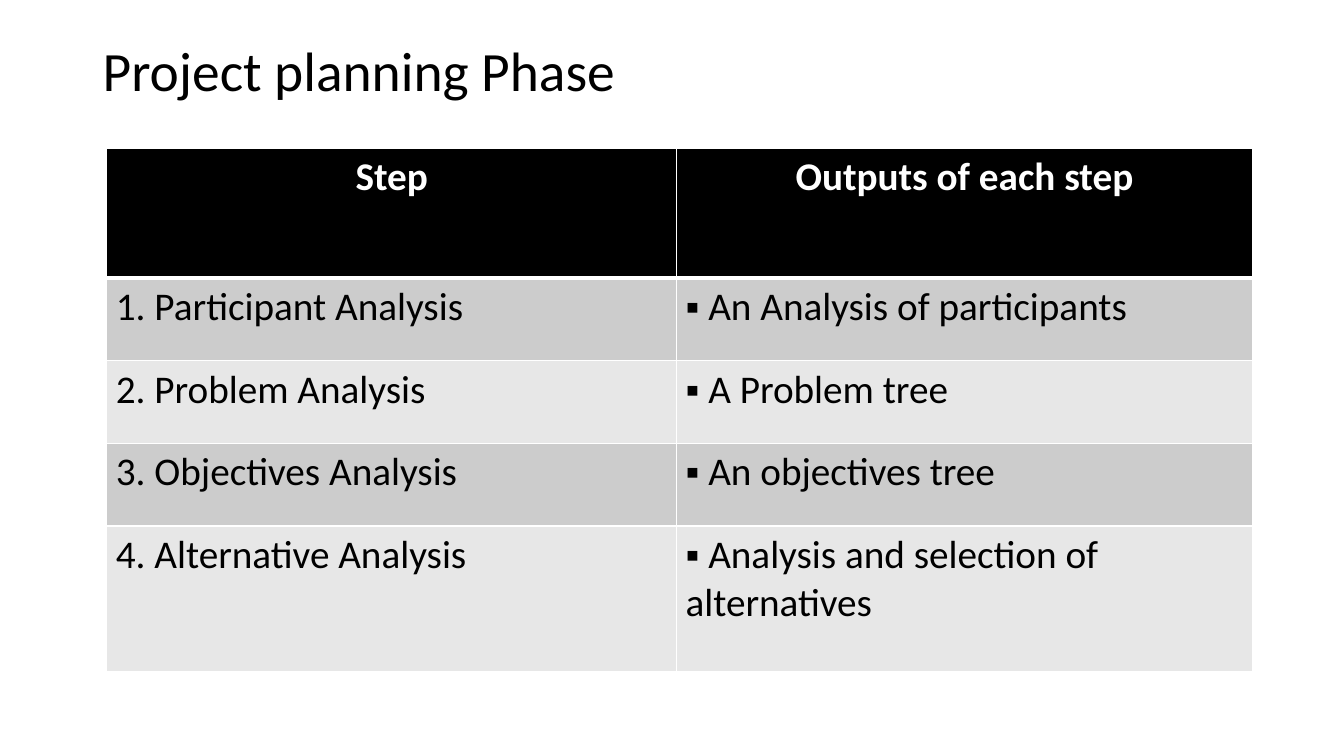
from lxml import etree
from pptx import Presentation
from pptx.dml.color import RGBColor
from pptx.enum.text import MSO_ANCHOR, PP_ALIGN
from pptx.oxml.ns import qn
from pptx.util import Inches, Pt

CENTER, LEFT = PP_ALIGN.CENTER, PP_ALIGN.LEFT
MIDDLE = MSO_ANCHOR.MIDDLE
FONT = "Calibri"
BLACK, WHITE = "000000", "FFFFFF"
BANDS = ("CCCCCC", "E7E7E7")
THIN, THICK = 1, 3

TITLE_BOX = (0.92, 0.4, 11.5, 0.66)
TABLE_BOX = (1.06, 1.47, 11.36, 5.19)
COLUMN_WIDTHS = (5.65, 5.71)
ROW_HEIGHTS = (1.29, 0.82, 0.82, 0.82, 1.44)
CELL_MARGINS = {"margin_left": 0.09, "margin_right": 0.09,
                "margin_top": 0.05, "margin_bottom": 0.05}

HEADINGS = ("Step", "Outputs of each step")
STEPS = (
    ("1. Participant Analysis", " An Analysis of participants"),
    ("2. Problem Analysis", " A Problem tree"),
    ("3. Objectives Analysis", " An objectives tree"),
    ("4. Alternative Analysis", " Analysis and selection of alternatives"),
)


def color(hex_value):
    return RGBColor.from_string(hex_value)


def write(paragraph, text, size, hex_value, bold=False):
    run = paragraph.add_run()
    run.text = text
    for name, value in {"name": FONT, "size": Pt(size), "bold": bold}.items():
        setattr(run.font, name, value)
    run.font.color.rgb = color(hex_value)


def add_bullet(paragraph):
    """Put a square before the text, with wrapped lines flush left."""
    properties = paragraph._p.get_or_add_pPr()
    properties.set("marL", "0")
    properties.set("indent", "0")
    etree.SubElement(properties, qn("a:buFont"), typeface="Arial")
    etree.SubElement(properties, qn("a:buChar"), char="▪")


def add_borders(cell, top, bottom):
    """Draw white cell borders; must come before the cell's fill."""
    properties = cell._tc.get_or_add_tcPr()
    for side, width in (("L", THIN), ("R", THIN), ("T", top), ("B", bottom)):
        line = etree.SubElement(properties, qn(f"a:ln{side}"), w=str(Pt(width)))
        fill = etree.SubElement(line, qn("a:solidFill"))
        etree.SubElement(fill, qn("a:srgbClr"), val=WHITE)


def add_title(slide, box, text):
    frame = slide.shapes.add_textbox(*map(Inches, box)).text_frame
    frame.word_wrap = True
    frame.vertical_anchor = MIDDLE
    frame.paragraphs[0].line_spacing = 0.9
    write(frame.paragraphs[0], text, 39.6, BLACK)


def fill_cell(cell, text, row, column):
    header = row == 0
    for name, value in CELL_MARGINS.items():
        setattr(cell, name, Inches(value))
    add_borders(cell, THICK if row == 1 else THIN, THICK if header else THIN)
    cell.fill.solid()
    cell.fill.fore_color.rgb = color(BLACK if header else BANDS[(row - 1) % 2])
    paragraph = cell.text_frame.paragraphs[0]
    paragraph.alignment = CENTER if header else LEFT
    if column == 1 and not header:
        add_bullet(paragraph)
    write(paragraph, text, 28, WHITE if header else BLACK, header)


def add_steps_table(slide, box):
    rows = (HEADINGS, *STEPS)
    table = slide.shapes.add_table(
        len(rows), len(HEADINGS), *map(Inches, box)).table
    for column, width in zip(table.columns, COLUMN_WIDTHS):
        column.width = Inches(width)
    for row, height in zip(table.rows, ROW_HEIGHTS):
        row.height = Inches(height)
    for r, texts in enumerate(rows):
        for c, text in enumerate(texts):
            fill_cell(table.cell(r, c), text, r, c)


def main():
    deck = Presentation()
    deck.slide_width, deck.slide_height = Inches(13.33), Inches(7.5)
    slide = deck.slides.add_slide(deck.slide_layouts[6])
    add_title(slide, TITLE_BOX, "Project planning Phase")
    add_steps_table(slide, TABLE_BOX)
    deck.save("out.pptx")


if __name__ == "__main__":
    main()
